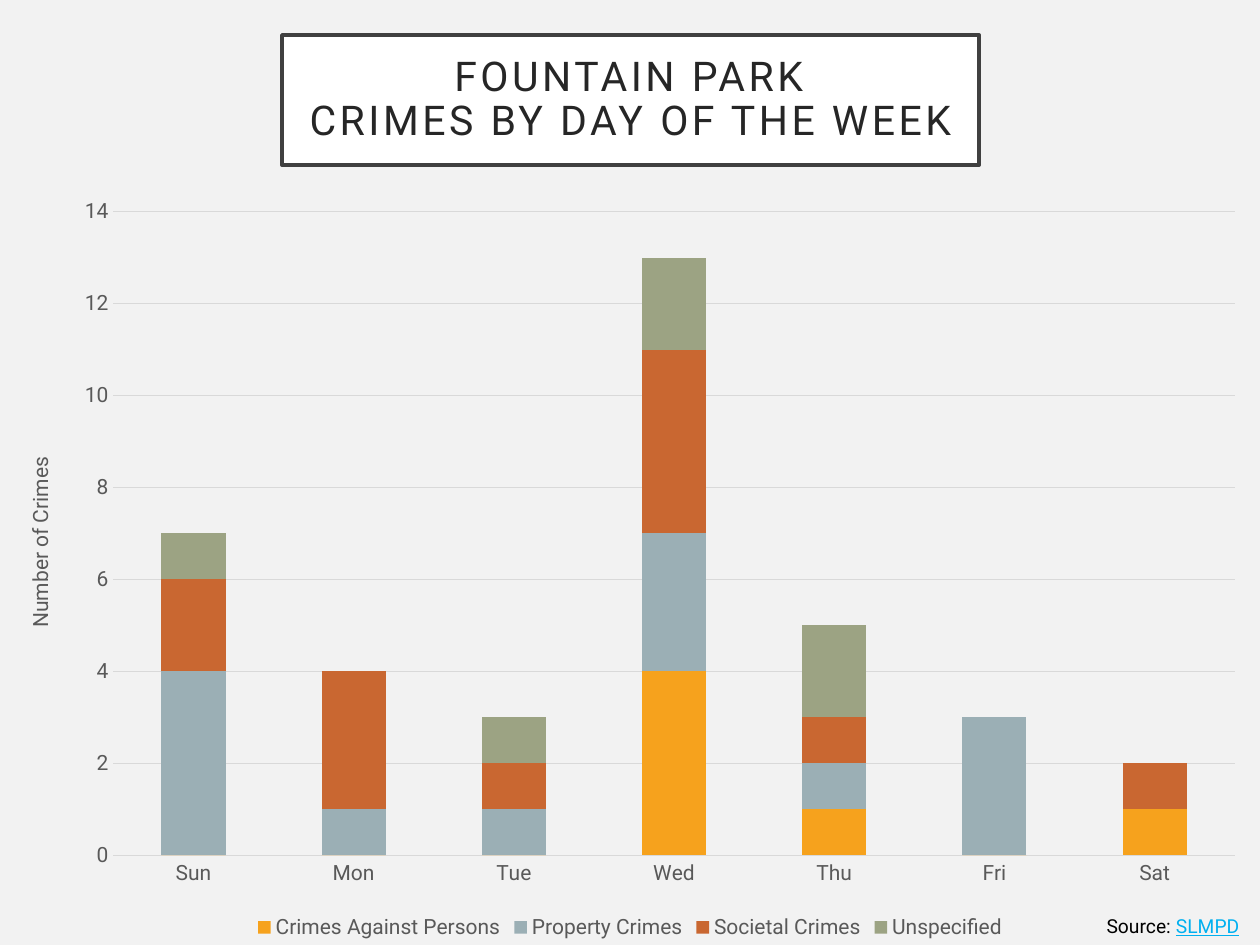
from lxml.etree import SubElement
from pptx import Presentation
from pptx.chart.data import CategoryChartData
from pptx.dml.color import RGBColor
from pptx.enum.chart import XL_CHART_TYPE, XL_LEGEND_POSITION, XL_TICK_MARK
from pptx.enum.shapes import MSO_SHAPE
from pptx.enum.text import MSO_ANCHOR, PP_ALIGN
from pptx.oxml.ns import qn
from pptx.util import Inches, Pt

FONT = "Roboto"
BACKGROUND = RGBColor(0xF2, 0xF2, 0xF2)
WHITE = RGBColor(0xFF, 0xFF, 0xFF)
BLACK = RGBColor(0, 0, 0)
FRAME = RGBColor(0x40, 0x40, 0x40)
TITLE = RGBColor(0x26, 0x26, 0x26)
LABEL = RGBColor(0x59, 0x59, 0x59)
GRID = RGBColor(0xD9, 0xD9, 0xD9)
LINK = RGBColor(0x00, 0xB0, 0xF0)

TITLE_LINES = ["FOUNTAIN PARK", "CRIMES BY DAY OF THE WEEK"]
SOURCE = [("Source: ", BLACK, False), ("SLMPD", LINK, True)]
DAYS = ["Sun", "Mon", "Tue", "Wed", "Thu", "Fri", "Sat"]
CRIMES = [
    ("Crimes Against Persons", (0, 0, 0, 4, 1, 0, 1), RGBColor(0xF6, 0xA2, 0x1D)),
    ("Property Crimes", (4, 1, 1, 3, 1, 3, 0), RGBColor(0x9B, 0xAF, 0xB5)),
    ("Societal Crimes", (2, 3, 1, 4, 1, 0, 1), RGBColor(0xC9, 0x67, 0x31)),
    ("Unspecified", (1, 0, 1, 2, 2, 0, 0), RGBColor(0x9C, 0xA3, 0x83)),
]
CHART_BOX = (0, 1.47, 10, 6.03)
PLOT_BOX = (0.9, 0.21, 8.9, 5.11)  # inches, inside the chart


def style(font, size, color):
    font.name, font.size, font.bold = FONT, Pt(size), False
    font.color.rgb = color


def add_title(slide):
    s = slide.shapes.add_shape(MSO_SHAPE.RECTANGLE, Inches(2.24), Inches(0.28),
                               Inches(5.53), Inches(1.03))
    s.shadow.inherit = False
    s.fill.solid()
    s.fill.fore_color.rgb = WHITE
    s.line.color.rgb = FRAME
    s.line.width = Pt(2.5)
    tf = s.text_frame
    tf.word_wrap = True
    tf.vertical_anchor = MSO_ANCHOR.MIDDLE
    tf.margin_left = tf.margin_right = tf.margin_top = tf.margin_bottom = Inches(0.2)
    p = tf.paragraphs[0]
    p.alignment = PP_ALIGN.CENTER
    p.line_spacing = 0.9
    for i, line in enumerate(TITLE_LINES):
        if i:
            p.add_line_break()
        r = p.add_run()
        r.text = line
        style(r.font, 23.4, TITLE)
        r.font._element.set("spc", "200")


def add_source(slide):
    tf = slide.shapes.add_textbox(Inches(8.66), Inches(7.21),
                                  Inches(1.3), Inches(0.29)).text_frame
    tf.word_wrap = True
    p = tf.paragraphs[0]
    p.alignment = PP_ALIGN.CENTER
    for text, color, underlined in SOURCE:
        r = p.add_run()
        r.text = text
        style(r.font, 11, color)
        r.font.underline = underlined


def place_plot(chart):
    """Fix the inner plot area, as fractions of the chart's size."""
    area = chart._chartSpace.chart.plotArea
    layout = area.find(qn("c:layout"))
    if layout is None:
        layout = SubElement(area, qn("c:layout"))
        area.insert(0, layout)
    manual = SubElement(layout, qn("c:manualLayout"))
    width, height = CHART_BOX[2:]
    fractions = [v / size for v, size in zip(PLOT_BOX, (width, height) * 2)]
    settings = [("layoutTarget", "inner"), ("xMode", "edge"), ("yMode", "edge"),
                *zip("xywh", fractions)]
    for name, value in settings:
        SubElement(manual, qn(f"c:{name}")).set("val", str(value))


def add_crime_chart(slide):
    data = CategoryChartData()
    data.categories = DAYS
    for name, values, _ in CRIMES:
        data.add_series(name, values)
    chart = slide.shapes.add_chart(XL_CHART_TYPE.COLUMN_STACKED,
                                   *map(Inches, CHART_BOX), data).chart
    style(chart.font, 12, BLACK)
    chart.has_title = False
    place_plot(chart)

    plot = chart.plots[0]
    plot.gap_width, plot.overlap = 150, 100
    plot.vary_by_categories = False
    for series, (_, _, color) in zip(plot.series, CRIMES):
        series.format.fill.solid()
        series.format.fill.fore_color.rgb = color

    days, counts = chart.category_axis, chart.value_axis
    for axis in (days, counts):
        axis.major_tick_mark = axis.minor_tick_mark = XL_TICK_MARK.NONE
        style(axis.tick_labels.font, 12, LABEL)
    counts.minimum_scale, counts.maximum_scale, counts.major_unit = 0, 14, 2
    counts.format.line.fill.background()
    counts.has_major_gridlines = True
    for line in (days.format.line, counts.major_gridlines.format.line):
        line.color.rgb = GRID
        line.width = Pt(0.75)
    r = counts.axis_title.text_frame.paragraphs[0].add_run()
    r.text = "Number of Crimes"
    style(r.font, 12, LABEL)
    counts.axis_title.text_frame._txBody.bodyPr.set("rot", "-5400000")

    chart.has_legend = True
    chart.legend.position = XL_LEGEND_POSITION.BOTTOM
    chart.legend.include_in_layout = False
    style(chart.legend.font, 12, LABEL)


def main():
    prs = Presentation()
    prs.slide_width, prs.slide_height = Inches(10), Inches(7.5)
    slide = prs.slides.add_slide(prs.slide_layouts[6])
    slide.background.fill.solid()
    slide.background.fill.fore_color.rgb = BACKGROUND
    add_title(slide)
    add_source(slide)
    add_crime_chart(slide)
    prs.save("out.pptx")


if __name__ == "__main__":
    main()
